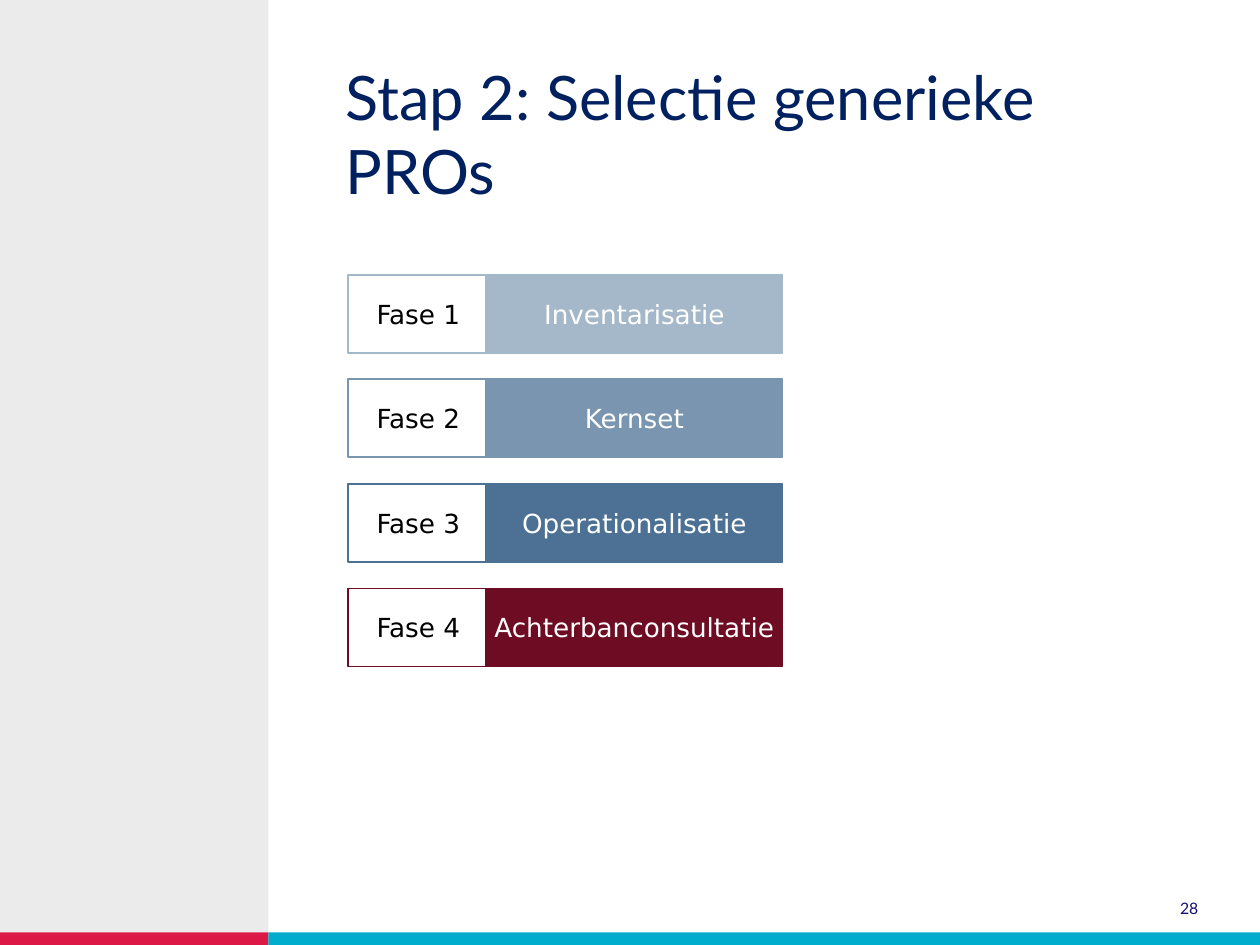
"""Build the slide on step 2, the selection of generic PROs, with its four phases."""
from typing import NamedTuple, Optional

from pptx import Presentation
from pptx.dml.color import RGBColor
from pptx.enum import shapes, text
from pptx.util import Inches, Pt

NAVY = RGBColor(0x00, 0x20, 0x60)
INDIGO = RGBColor(0x11, 0x0E, 0x72)
BLACK = RGBColor(0x00, 0x00, 0x00)
WHITE = RGBColor(0xFF, 0xFF, 0xFF)
LIGHT_GREY = RGBColor(0xEB, 0xEB, 0xEB)
RED = RGBColor(0xDC, 0x19, 0x46)
CYAN = RGBColor(0x00, 0xAD, 0xCC)
PALE_BLUE = RGBColor(0xA5, 0xB8, 0xC9)
MID_BLUE = RGBColor(0x79, 0x95, 0xAF)
STEEL_BLUE = RGBColor(0x4C, 0x71, 0x94)
BURGUNDY = RGBColor(0x6E, 0x0C, 0x23)

HEADING_FONT = "Lato"
PHASE_FONT = "DejaVu Sans"
PHASE_TOP = 2.18
PHASE_PITCH = 0.83
PHASE_HEIGHT = 0.62


class Box(NamedTuple):
    left: float
    top: float
    width: float
    height: float


class Band(NamedTuple):
    box: Box
    color: RGBColor


class Phase(NamedTuple):
    name: str
    color: RGBColor


BANDS = [
    Band(Box(0, 0, 2.13, 7.4), LIGHT_GREY),
    Band(Box(0, 7.4, 2.13, 0.1), RED),
    Band(Box(2.13, 7.4, 7.87, 0.1), CYAN),
]
PHASES = [
    Phase("Inventarisatie", PALE_BLUE),
    Phase("Kernset", MID_BLUE),
    Phase("Operationalisatie", STEEL_BLUE),
    Phase("Achterbanconsultatie", BURGUNDY),
]


def lengths(box: Box) -> list:
    return [Inches(value) for value in box]


def set_margins(frame, side: float, vertical: float) -> None:
    frame.margin_left = frame.margin_right = Inches(side)
    frame.margin_top = frame.margin_bottom = Inches(vertical)


def write(frame, words: str, font: str, size: float, color: RGBColor, align):
    paragraph = frame.paragraphs[0]
    paragraph.alignment = align
    run = paragraph.add_run()
    run.text = words
    run.font.name = font
    run.font.size = Pt(size)
    run.font.color.rgb = color
    return paragraph


def add_rectangle(parent, box: Box, fill: Optional[RGBColor], line: Optional[RGBColor]):
    rectangle = parent.add_shape(shapes.MSO_SHAPE.RECTANGLE, *lengths(box))
    rectangle.shadow.inherit = False
    if fill is None:
        rectangle.fill.background()
    else:
        rectangle.fill.solid()
        rectangle.fill.fore_color.rgb = fill
    if line is None:
        rectangle.line.fill.background()
    else:
        rectangle.line.color.rgb = line
        rectangle.line.width = Pt(1)
    return rectangle


def add_label(rectangle, words: str, color: RGBColor, side: float) -> None:
    frame = rectangle.text_frame
    frame.word_wrap = True
    frame.vertical_anchor = text.MSO_ANCHOR.MIDDLE
    set_margins(frame, side, 0.05)
    write(frame, words, PHASE_FONT, 15, color, text.PP_ALIGN.CENTER)


def add_phase(slide, index: int, phase: Phase) -> None:
    top = PHASE_TOP + index * PHASE_PITCH
    group = slide.shapes.add_group_shape().shapes
    activity = add_rectangle(group, Box(3.86, top, 2.35, PHASE_HEIGHT), phase.color, phase.color)
    add_label(activity, phase.name, WHITE, 0.03)
    number = add_rectangle(group, Box(2.76, top, 1.12, PHASE_HEIGHT), None, phase.color)
    add_label(number, f"Fase {index + 1}", BLACK, 0.1)


def add_title(slide, words: str) -> None:
    title = slide.shapes.title
    title.left, title.top, title.width, title.height = lengths(Box(2.74, 0.47, 6.38, 0.66))
    frame = title.text_frame
    frame.word_wrap = True
    frame.auto_size = text.MSO_AUTO_SIZE.NONE
    frame.vertical_anchor = text.MSO_ANCHOR.TOP
    set_margins(frame, 0, 0)
    heading = write(frame, words, HEADING_FONT, 35, NAVY, text.PP_ALIGN.LEFT)
    heading.line_spacing = Pt(42)


def add_page_number(slide, number: str) -> None:
    frame = slide.shapes.add_textbox(*lengths(Box(9.12, 7.13, 0.39, 0.16))).text_frame
    frame.word_wrap = True
    set_margins(frame, 0, 0)
    write(frame, number, HEADING_FONT, 9, INDIGO, text.PP_ALIGN.RIGHT)


def main() -> None:
    deck = Presentation()
    deck.slide_width, deck.slide_height = Inches(10), Inches(7.5)
    slide = deck.slides.add_slide(deck.slide_layouts[5])
    for band in BANDS:
        add_rectangle(slide.shapes, band.box, band.color, None)
    add_title(slide, "Stap 2: Selectie generieke PROs")
    add_page_number(slide, "28")
    for index, phase in enumerate(PHASES):
        add_phase(slide, index, phase)
    deck.save("out.pptx")


if __name__ == "__main__":
    main()
